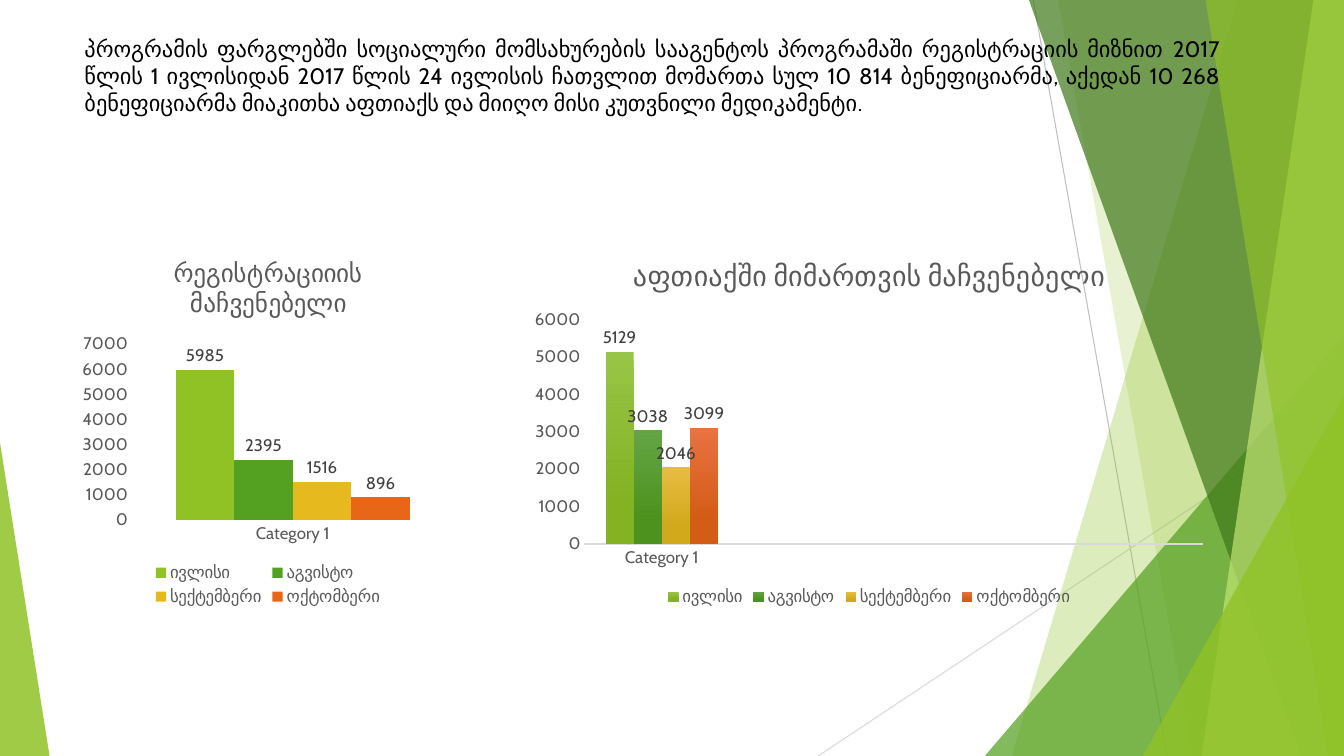
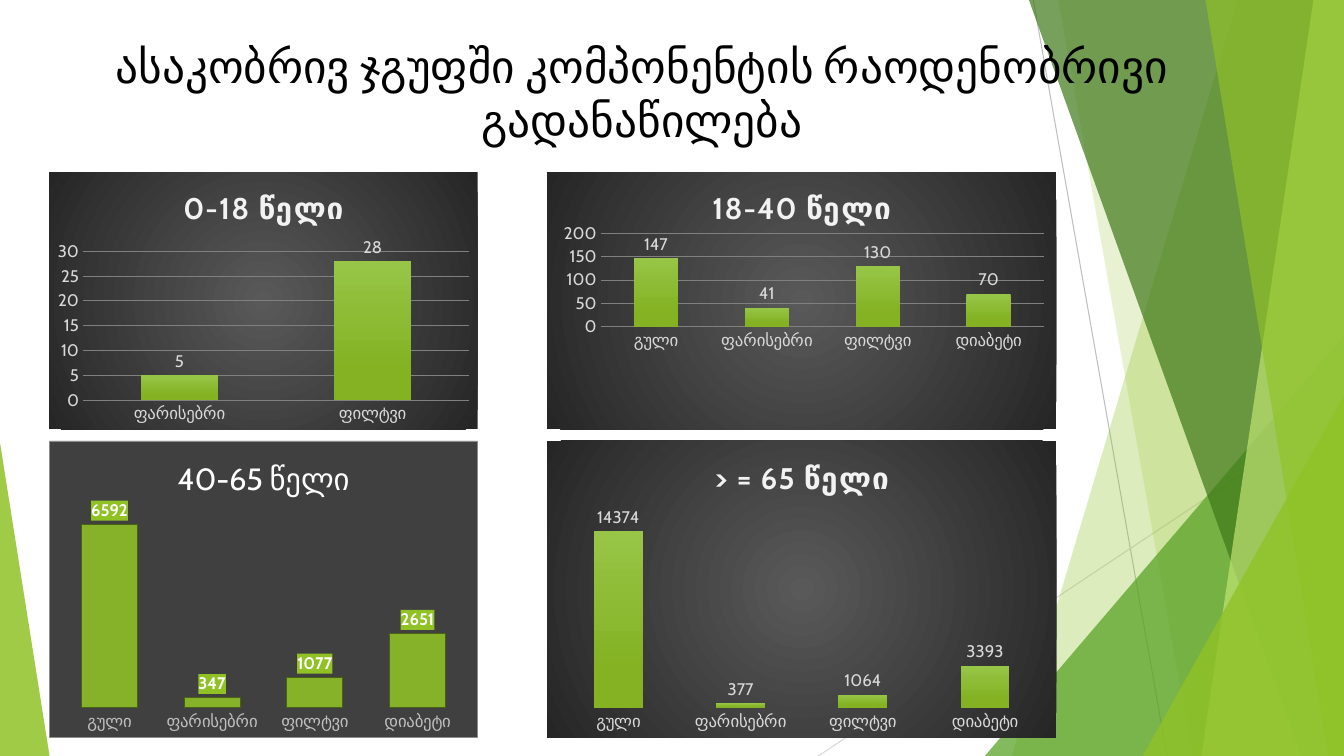
from dataclasses import dataclass
from typing import Optional

from lxml import etree
from pptx import Presentation
from pptx import util as u
from pptx.chart import data as chart_data
from pptx.dml import color
from pptx.enum import chart as ce
from pptx.enum import shapes, text
from pptx.oxml import parse_xml
from pptx.oxml.ns import nsdecls, qn

FONT = "Cabin"
WIDTH, HEIGHT = 33.87, 19.05
LIME, GREEN, GOLD, ORANGE = "90C226", "54A021", "E6B91E", "E76618"
LIME_FADE = ("97C547", "84B223")
GREEN_FADE = ("63A545", "4D921E")
GOLD_FADE = ("E7BC43", "D2A91B")
ORANGE_FADE = ("E87242", "D35D16")

NO_FILL = "<a:noFill/>"
NO_LINE = "<a:ln><a:noFill/></a:ln>"
SPOTLIGHT = (
    '<a:gradFill><a:gsLst><a:gs pos="0"><a:srgbClr val="595959"/></a:gs>'
    '<a:gs pos="100000"><a:srgbClr val="262626"/></a:gs></a:gsLst>'
    '<a:path path="circle"><a:fillToRect l="50000" t="50000" r="50000" b="50000"/>'
    "</a:path></a:gradFill>"
)


def solid(colour: str) -> str:
    return f'<a:solidFill><a:srgbClr val="{colour}"/></a:solidFill>'


@dataclass(frozen=True)
class Ray:
    start: tuple[float, float]
    end: tuple[float, float]
    colour: str


@dataclass(frozen=True)
class Band:
    top_x: float
    bottom_x: float
    colour: str
    opacity: int


@dataclass(frozen=True)
class Corner:
    left: float
    top: float
    width: float
    peak: int
    colour: str
    opacity: int


@dataclass(frozen=True)
class Heading:
    wording: str
    place: tuple[float, float, float, float]
    size: float
    align: text.PP_ALIGN
    anchor: text.MSO_ANCHOR


@dataclass(frozen=True)
class Look:
    axis: str
    label: str
    title: str
    backdrop: str = NO_FILL
    border: str = NO_LINE
    bold_title: bool = False
    label_box: Optional[str] = None
    bar_edge: Optional[str] = None
    bar_opacity: Optional[int] = None
    gap: int = 150


@dataclass(frozen=True)
class Panel:
    title: str
    title_size: float
    place: tuple[float, float, float, float]
    look: Look
    categories: tuple[str, ...]
    series: tuple[tuple[str, tuple, str | tuple[str, str]], ...]
    show_values: bool = True
    gridlines: bool = False
    base_line: Optional[str] = None
    plot: Optional[tuple[float, float, float, float]] = None


RAYS = (
    Ray((26.04, 0), (29.41, HEIGHT), "BFBFBF"),
    Ray((WIDTH, 10.24), (20.62, HEIGHT), "D9D9D9"),
)
FACETS = (
    Band(31.19, 25.5, LIME, 30),
    Band(26.67, 30.05, LIME, 20),
    Corner(24.82, 8.46, 9.05, 1, GREEN, 72),
    Band(25.93, 32.79, "3F7819", 70),
    Band(33.1, 30.28, "C0E474", 70),
    Band(30.38, 33.48, LIME, 65),
    Corner(28.8, 9.98, 5.07, 1, LIME, 80),
    Corner(0, 11.15, 1.25, 0, LIME, 85),
)

LIGHT = Look("595959", "404040", "595959")
DARK = Look("D9D9D9", "D9D9D9", "F2F2F2", SPOTLIGHT, bold_title=True)
FLAT = Look(
    "BFBFBF", "FFFFFF", "FFFFFF", solid("404040"),
    f'<a:ln w="6350">{solid("8C8C8C")}</a:ln>',
    label_box=LIME, bar_edge="486113", bar_opacity=88, gap=84,
)

MONTHS = ("ივლისი", "აგვისტო", "სექტემბერი", "ოქტომბერი")
CONDITIONS = ("გული", "ფარისებრი", "ფილტვი", "დიაბეტი")


def monthly(counts: tuple, colours: tuple, slots: int) -> tuple:
    rest = (None,) * (slots - 1)
    return tuple((m, (n, *rest), c) for m, n, c in zip(MONTHS, counts, colours))


def age_panel(title: str, counts: tuple, column: int, row: int, look: Look = DARK,
              size: float = 21.3, categories: tuple = CONDITIONS,
              fill: str | tuple = LIME_FADE, name: str = "", plot: Optional[tuple] = None) -> Panel:
    left, width = ((1.24, 10.8), (13.79, 12.83))[column]
    top, height = ((4.34, 6.48), (11.1, 7.49))[row]
    return Panel(title, size, (left, top, width, height), look, categories,
                 ((name or title, counts, fill),), show_values=row == 0,
                 gridlines=row == 0, plot=plot)


PAGES = (
    (
        Heading(
            "პროგრამის ფარგლებში სოციალური მომსახურების სააგენტოს პროგრამაში რეგისტრაციის მიზნით "
            "2017 წლის 1 ივლისიდან 2017 წლის 24 ივლისის ჩათვლით მომართა სულ 10 814 ბენეფიციარმა, "
            "აქედან 10 268 ბენეფიციარმა მიაკითხა აფთიაქს და მიიღო მისი კუთვნილი მედიკამენტი.",
            (1.88, 0.76, 29.13, 3.76), 16, text.PP_ALIGN.JUSTIFY, text.MSO_ANCHOR.TOP),
        (
            Panel("რეგისტრაციიის მაჩვენებელი", 18, (1.88, 5.99, 9.75, 9.4), LIGHT, ("Category 1",),
                  monthly((5985, 2395, 1516, 896), (LIME, GREEN, GOLD, ORANGE), 1)),
            Panel("აფთიაქში მიმართვის მაჩვენებელი", 20, (13.13, 5.99, 17.55, 9.4), LIGHT,
                  ("Category 1", "", "", ""),
                  monthly((5129, 3038, 2046, 3099),
                          (LIME_FADE, GREEN_FADE, GOLD_FADE, ORANGE_FADE), 4),
                  base_line="D9D9D9"),
        ),
    ),
    (
        Heading("ასაკობრივ ჯგუფში კომპონენტის რაოდენობრივი გადანაწილება",
                (1.88, 0.81, 28.6, 3.05), 32.4, text.PP_ALIGN.CENTER, text.MSO_ANCHOR.MIDDLE),
        (
            age_panel("0-18 წელი", (5, 28), 0, 0, categories=CONDITIONS[1:3]),
            age_panel("18-40 წელი", (147, 41, 130, 70), 1, 0, plot=(0.105, 0.239, 0.871, 0.362)),
            age_panel("40-65 წელი", (6592, 347, 1077, 2651), 0, 1, FLAT, 22, fill=LIME),
            age_panel("> = 65 წელი", (14374, 377, 1064, 3393), 1, 1, name="Series 1"),
        ),
    ),
)


def rgb(colour: str) -> color.RGBColor:
    return color.RGBColor.from_string(colour)


def set_font(font, size: float, colour: str, bold: bool = False) -> None:
    font.name, font.size, font.bold = FONT, u.Pt(size), bold
    font.color.rgb = rgb(colour)


def set_opacity(properties, percent: int) -> None:
    tint = properties.find(qn("a:solidFill")).find(qn("a:srgbClr"))
    etree.SubElement(tint, qn("a:alpha")).set("val", str(percent * 1000))


def chart_properties(content: str):
    return parse_xml(f'<c:spPr {nsdecls("c", "a")}>{content}</c:spPr>')


def draw_ray(slide, ray: Ray) -> None:
    line = slide.shapes.add_connector(
        shapes.MSO_CONNECTOR.STRAIGHT, *(u.Cm(v) for v in ray.start + ray.end))
    line.line.color.rgb = rgb(ray.colour)
    line.line.width = u.Pt(0.75)
    etree.SubElement(line.element.spPr, qn("a:effectLst"))


def draw_facet(slide, facet: Band | Corner) -> None:
    if isinstance(facet, Band):
        outline = slide.shapes.build_freeform(u.Cm(facet.top_x), 0)
        outline.add_line_segments(
            [(u.Cm(x), u.Cm(y)) for x, y in
             ((WIDTH, 0), (WIDTH, HEIGHT), (facet.bottom_x, HEIGHT))], close=True)
        shape = outline.convert_to_shape()
    else:
        shape = slide.shapes.add_shape(
            shapes.MSO_SHAPE.ISOSCELES_TRIANGLE, u.Cm(facet.left), u.Cm(facet.top),
            u.Cm(facet.width), u.Cm(HEIGHT - facet.top))
        shape.adjustments[0] = facet.peak
    shape.shadow.inherit = False
    shape.fill.solid()
    shape.fill.fore_color.rgb = rgb(facet.colour)
    shape.line.fill.background()
    set_opacity(shape.element.spPr, facet.opacity)


def draw_heading(slide, heading: Heading) -> None:
    frame = slide.shapes.add_textbox(*(u.Cm(v) for v in heading.place)).text_frame
    frame.word_wrap = True
    frame.vertical_anchor = heading.anchor
    paragraph = frame.paragraphs[0]
    paragraph.text = heading.wording
    paragraph.alignment = heading.align
    set_font(paragraph.font, heading.size, "000000")


def style_axes(chart, panel: Panel) -> None:
    values = chart.value_axis
    values.visible = panel.show_values
    values.has_major_gridlines = panel.gridlines
    if panel.gridlines:
        grid = values.major_gridlines.format.line
        grid.color.rgb = rgb("808080")
        grid.width = u.Pt(0.75)
    for axis in (chart.category_axis, values):
        axis.major_tick_mark = axis.minor_tick_mark = ce.XL_TICK_MARK.NONE
        axis.format.line.fill.background()
        set_font(axis.tick_labels.font, 12, panel.look.axis)
    if panel.base_line:
        base = chart.category_axis.format.line
        base.color.rgb = rgb(panel.base_line)
        base.width = u.Pt(1)


def style_series(series, fill: str | tuple[str, str], look: Look) -> None:
    bar = series.format
    if isinstance(fill, str):
        bar.fill.solid()
        bar.fill.fore_color.rgb = rgb(fill)
    else:
        bar.fill.gradient()
        bar.fill.gradient_angle = 270
        for stop, position, tint in zip(bar.fill.gradient_stops, (0, 0.78), fill):
            stop.position, stop.color.rgb = position, rgb(tint)
    if look.bar_edge:
        bar.line.color.rgb = rgb(look.bar_edge)
        bar.line.width = u.Pt(0.75)
    else:
        bar.line.fill.background()
    labels = series.data_labels
    labels.show_value = True
    labels.position = ce.XL_LABEL_POSITION.OUTSIDE_END
    set_font(labels.font, 12, look.label, bold=look.label_box is not None)


def style_backdrop(chart, panel: Panel) -> None:
    look = panel.look
    body = chart.element.find(qn("c:chart"))
    body.addnext(chart_properties(look.backdrop + look.border))
    area = body.find(qn("c:plotArea"))
    area.append(chart_properties(NO_FILL + NO_LINE))
    if panel.plot:
        for layout in area.findall(qn("c:layout")):
            area.remove(layout)
        sizes = "".join(f'<c:{k} val="{v}"/>' for k, v in zip("xywh", panel.plot))
        area.insert(0, parse_xml(
            f'<c:layout {nsdecls("c")}><c:manualLayout><c:layoutTarget val="inner"/>'
            f'<c:xMode val="edge"/><c:yMode val="edge"/>{sizes}</c:manualLayout></c:layout>'))
    for bars in area.iter(qn("c:ser")):
        if look.bar_opacity:
            set_opacity(bars.find(qn("c:spPr")), look.bar_opacity)
        if look.label_box:
            label_text = bars.find(qn("c:dLbls")).find(qn("c:txPr"))
            label_text.addprevious(chart_properties(solid(look.label_box)))


def draw_panel(slide, panel: Panel) -> None:
    figures = chart_data.CategoryChartData()
    figures.categories = panel.categories
    for name, counts, _ in panel.series:
        figures.add_series(name, counts)
    chart = slide.shapes.add_chart(
        ce.XL_CHART_TYPE.COLUMN_CLUSTERED, *(u.Cm(v) for v in panel.place), figures).chart
    set_font(chart.font, 10, "000000")
    chart.has_title = True
    title = chart.chart_title.text_frame.paragraphs[0]
    title.text = panel.title
    set_font(title.font, panel.title_size, panel.look.title, panel.look.bold_title)
    if panel.look.bold_title:
        for properties in chart.element.find(qn("c:chart")).find(qn("c:title")).iter(qn("a:defRPr")):
            properties.set("spc", "100")
    chart.has_legend = len(panel.series) > 1
    if chart.has_legend:
        chart.legend.position = ce.XL_LEGEND_POSITION.BOTTOM
        chart.legend.include_in_layout = False
        set_font(chart.legend.font, 12, panel.look.axis)
    columns = chart.plots[0]
    columns.gap_width = panel.look.gap
    columns.vary_by_categories = False
    for series, (_, _, fill) in zip(columns.series, panel.series):
        style_series(series, fill, panel.look)
    style_axes(chart, panel)
    style_backdrop(chart, panel)


def main() -> None:
    deck = Presentation()
    deck.slide_width, deck.slide_height = u.Cm(WIDTH), u.Cm(HEIGHT)
    for heading, panels in PAGES:
        slide = deck.slides.add_slide(deck.slide_layouts[6])
        for ray in RAYS:
            draw_ray(slide, ray)
        for facet in FACETS:
            draw_facet(slide, facet)
        draw_heading(slide, heading)
        for panel in panels:
            draw_panel(slide, panel)
    deck.save("out.pptx")


if __name__ == "__main__":
    main()
